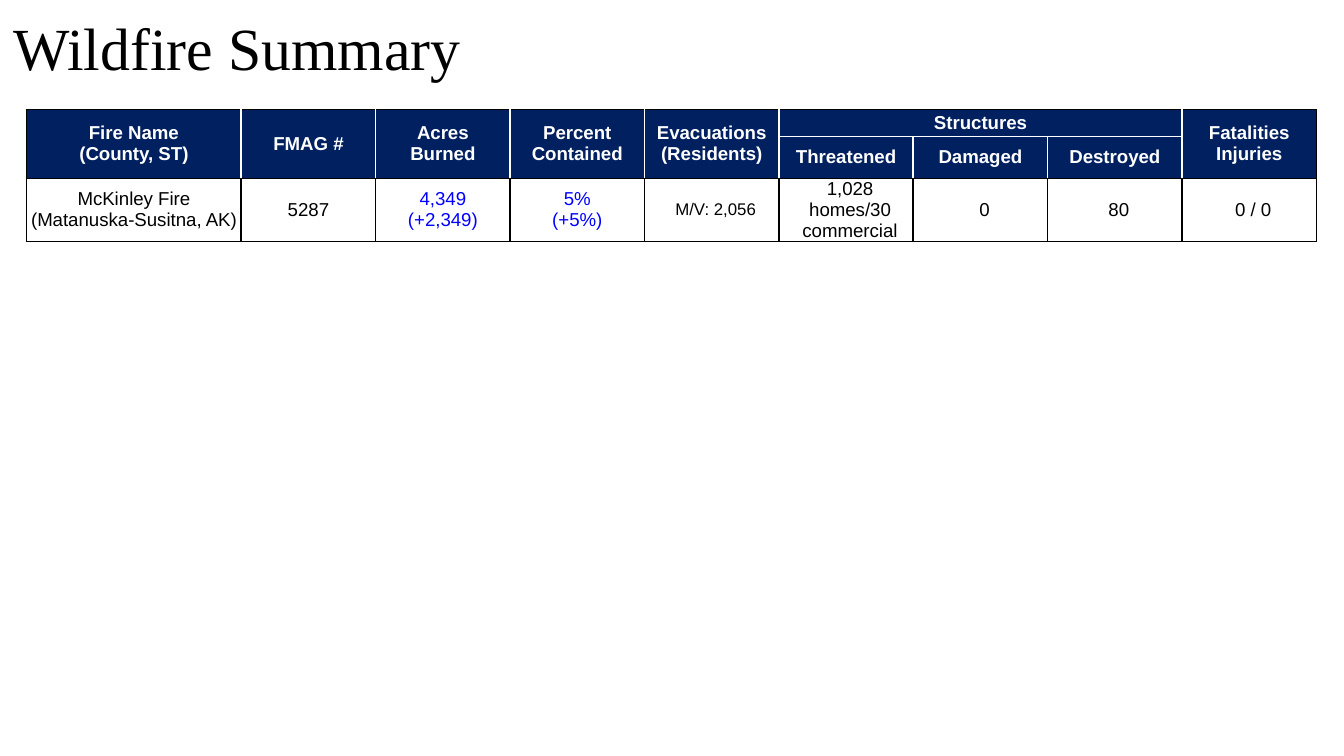
from lxml import etree
from pptx import Presentation
from pptx.dml.color import RGBColor
from pptx.enum.text import MSO_ANCHOR, MSO_AUTO_SIZE, PP_ALIGN
from pptx.oxml.ns import qn
from pptx.util import Cm, Pt

MIDDLE = MSO_ANCHOR.MIDDLE
NO_AUTOFIT = MSO_AUTO_SIZE.NONE
LEFT, CENTER = PP_ALIGN.LEFT, PP_ALIGN.CENTER

BLACK = RGBColor(0x00, 0x00, 0x00)
WHITE = RGBColor(0xFF, 0xFF, 0xFF)
NAVY = RGBColor(0x00, 0x20, 0x60)
BLUE = RGBColor(0x00, 0x00, 0xFF)

TITLE_ONLY = 5
HEADER_ROWS = 2
COLUMN_WIDTHS = [4.06] + [2.54] * 8
ROW_HEIGHTS = [0.51, 0.78, 1.19]

# Header cells: row, column, rows spanned, columns spanned, paragraphs
HEADERS = [
    (0, 0, 2, 1, ["Fire Name\n(County, ST)"]),
    (0, 1, 2, 1, ["FMAG #"]),
    (0, 2, 2, 1, ["Acres\nBurned"]),
    (0, 3, 2, 1, ["Percent Contained"]),
    (0, 4, 2, 1, ["Evacuations", "(Residents)"]),
    (0, 5, 1, 3, ["Structures"]),
    (0, 8, 2, 1, ["Fatalities Injuries"]),
    (1, 5, 1, 1, ["Threatened"]),
    (1, 6, 1, 1, ["Damaged"]),
    (1, 7, 1, 1, ["Destroyed"]),
]

# Fire record: paragraphs, colour, size, left indent in cm
RECORD = [
    (["McKinley Fire\n(Matanuska-Susitna, AK)"], BLACK, 10, 0),
    (["5287"], BLACK, 10, 0),
    (["4,349", "(+2,349)"], BLUE, 10, 0),
    (["5%", "(+5%)"], BLUE, 10, 0),
    (["M/V: 2,056"], BLACK, 9, 0.15),
    (["1,028 homes/30 commercial"], BLACK, 10, 0.15),
    (["0"], BLACK, 10, 0.15),
    (["80"], BLACK, 10, 0.15),
    (["0 / 0"], BLACK, 10, 0.15),
]


class SummarySlide:
    """Holds the style and the current slide."""

    title_font = "Times New Roman"
    table_font = "Arial"
    border_width = Pt(1)

    def __init__(self, deck):
        self.page = deck.slides.add_slide(deck.slide_layouts[TITLE_ONLY])

    def add_span(self, para, text, font, size, color, bold=False):
        span = para.add_run()
        span.text = text
        span.font.name = font
        span.font.size = Pt(size)
        span.font.bold = bold
        span.font.color.rgb = color

    def title(self, text, left, top, width, height):
        box = self.page.shapes.title
        box.left, box.top = Cm(left), Cm(top)
        box.width, box.height = Cm(width), Cm(height)
        frame = box.text_frame
        frame.word_wrap = True
        frame.auto_size = NO_AUTOFIT
        frame.vertical_anchor = MIDDLE
        para = frame.paragraphs[0]
        para.alignment = LEFT
        self.add_span(para, text, self.title_font, 32, BLACK)

    def table(self, left, top, widths, heights):
        frame = self.page.shapes.add_table(
            len(heights), len(widths), Cm(left), Cm(top),
            Cm(sum(widths)), Cm(sum(heights)))
        table = frame.table
        table.first_row = table.horz_banding = False
        for column, width in zip(table.columns, widths):
            column.width = Cm(width)
        for row, height in zip(table.rows, heights):
            row.height = Cm(height)
        for r in range(len(heights)):
            for c in range(len(widths)):
                self.format_cell(table.cell(r, c), r, c, len(widths) - 1)
        return table

    def format_cell(self, cell, row, column, last_column):
        header = row < HEADER_ROWS
        cell.margin_left = cell.margin_right = 0
        cell.margin_top = cell.margin_bottom = 0
        cell.vertical_anchor = MIDDLE
        cell.fill.solid()
        cell.fill.fore_color.rgb = NAVY if header else WHITE
        # White rules inside the header, black everywhere else
        inner = WHITE if header else BLACK
        self.borders(cell, {
            "a:lnL": BLACK if column == 0 else inner,
            "a:lnR": BLACK if column == last_column else inner,
            "a:lnT": BLACK if row == 0 else inner,
            "a:lnB": BLACK if row == HEADER_ROWS - 1 else inner,
        })
        # Keeps covered cells from stretching their row
        end = etree.SubElement(cell.text_frame.paragraphs[0]._p,
                               qn("a:endParaRPr"))
        end.set("sz", "1000")

    def borders(self, cell, colors):
        properties = cell._tc.get_or_add_tcPr()
        for old in [properties.find(qn(tag)) for tag in colors]:
            if old is not None:
                properties.remove(old)
        for index, (tag, color) in enumerate(colors.items()):
            line = etree.Element(qn(tag), w=str(self.border_width))
            fill = etree.SubElement(line, qn("a:solidFill"))
            etree.SubElement(fill, qn("a:srgbClr"), val=str(color))
            properties.insert(index, line)

    def cell_text(self, cell, paragraphs, color, size=10, indent=0, bold=False):
        frame = cell.text_frame
        for index, text in enumerate(paragraphs):
            para = frame.add_paragraph() if index else frame.paragraphs[0]
            para.alignment = CENTER
            if indent:
                para._p.get_or_add_pPr().set("marL", str(Cm(indent)))
            for number, line in enumerate(text.split("\n")):
                if number:
                    para.add_line_break()
                self.add_span(para, line, self.table_font, size, color, bold)


def main():
    deck = Presentation()
    deck.slide_width, deck.slide_height = Cm(25.4), Cm(14.28)
    slide = SummarySlide(deck)

    slide.title("Wildfire Summary", 0, 0, 25.4, 1.78)
    table = slide.table(0.5, 2.07, COLUMN_WIDTHS, ROW_HEIGHTS)

    # Column headings
    for row, column, rows, columns, paragraphs in HEADERS:
        cell = table.cell(row, column)
        if rows > 1 or columns > 1:
            cell.merge(table.cell(row + rows - 1, column + columns - 1))
        if row + rows == HEADER_ROWS:
            slide.borders(cell, {
                "a:lnL": BLACK if column == 0 else WHITE,
                "a:lnR": BLACK if column == len(COLUMN_WIDTHS) - 1 else WHITE,
                "a:lnT": BLACK if row == 0 else WHITE,
                "a:lnB": BLACK,
            })
        slide.cell_text(cell, paragraphs, WHITE, bold=True)

    # Fire record
    for column, (paragraphs, color, size, indent) in enumerate(RECORD):
        slide.cell_text(table.cell(HEADER_ROWS, column), paragraphs, color,
                        size, indent)

    deck.save("out.pptx")


if __name__ == "__main__":
    main()
